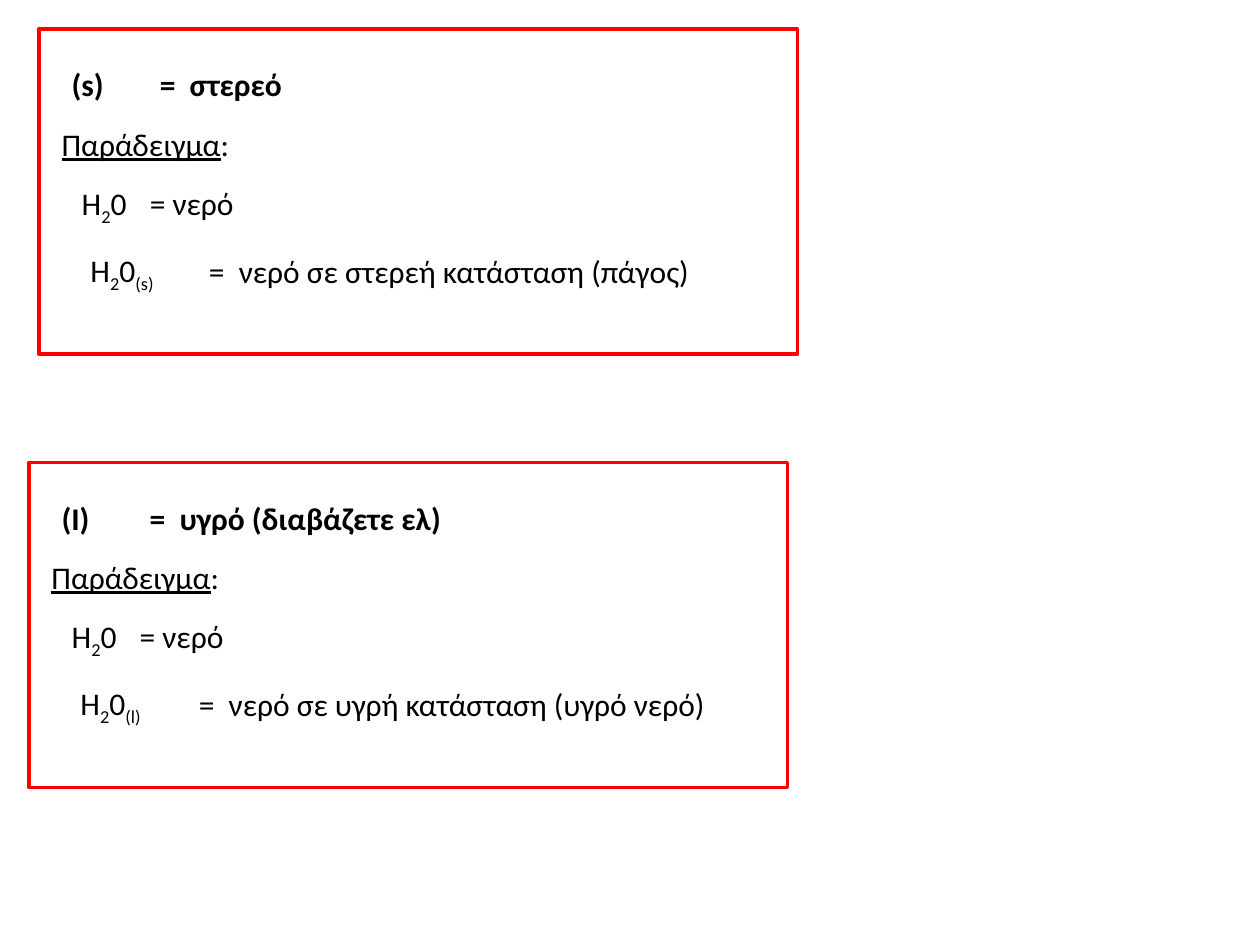
import pptx
import pptx.dml.color
import pptx.enum.shapes
import pptx.enum.text
import pptx.util

Inches = pptx.util.Inches
BLACK = pptx.dml.color.RGBColor(0x00, 0x00, 0x00)
RED = pptx.dml.color.RGBColor(0xFF, 0x00, 0x00)

FRAME_WIDTH, FRAME_HEIGHT = 6.02, 2.58
LINE_HEIGHT = 0.4
WATER = [("H", ""), ("2", "sub"), ("0", "")]

STATES = [
    (0.31, 0.23, "(s)", "=  στερεό", 1.33, "(s)",
     "=  νερό σε στερεή κατάσταση (πάγος)"),
    (0.23, 3.67, "(I)", "=  υγρό (διαβάζετε ελ)", 3.13, "(l)",
     "=  νερό σε υγρή κατάσταση (υγρό νερό)"),
]


def add_text(slide, left, top, width, pieces, height=LINE_HEIGHT):
    label = slide.shapes.add_textbox(
        Inches(left), Inches(top), Inches(width), Inches(height))
    frame = label.text_frame
    frame.word_wrap = True
    frame.auto_size = pptx.enum.text.MSO_AUTO_SIZE.SHAPE_TO_FIT_TEXT
    for wording, style in pieces:
        run = frame.paragraphs[0].add_run()
        run.text = wording
        run.font.name = "Calibri"
        run.font.size = pptx.util.Pt(18)
        run.font.color.rgb = BLACK
        if style == "bold":
            run.font.bold = True
        elif style == "underline":
            run.font.underline = True
        elif style == "sub":
            run._r.get_or_add_rPr().set("baseline", "-25000")


def add_frame(slide, left, top):
    frame = slide.shapes.add_shape(
        pptx.enum.shapes.MSO_SHAPE.RECTANGLE, Inches(left), Inches(top),
        Inches(FRAME_WIDTH), Inches(FRAME_HEIGHT))
    frame.shadow.inherit = False
    frame.fill.background()
    frame.line.color.rgb = RED
    frame.line.width = pptx.util.Pt(2)


def add_state(slide, left, top, symbol, meaning, meaning_width, suffix, example):
    add_text(slide, left + 0.16, top + 0.24, 0.78, [(symbol, "bold")])
    add_text(slide, left + 0.86, top + 0.24, meaning_width, [(meaning, "bold")])
    add_text(slide, left + 0.08, top + 0.71, 1.88,
             [("Παράδειγμα", "underline"), (":", "")])
    add_text(slide, left + 0.24, top + 1.18, 0.78, WATER)
    add_text(slide, left + 0.78, top + 1.18, 1.95, [("= νερό", "")])
    add_text(slide, left + 0.31, top + 1.71, 0.94, WATER + [(suffix, "sub")], 0.71)
    add_text(slide, left + 1.25, top + 1.72, 5, [(example, "")])
    add_frame(slide, left, top)


def main():
    presentation = pptx.Presentation()
    presentation.slide_width = Inches(10)
    presentation.slide_height = Inches(7.5)
    slide = presentation.slides.add_slide(presentation.slide_layouts[6])
    for state in STATES:
        add_state(slide, *state)
    presentation.save("out.pptx")


if __name__ == "__main__":
    main()
